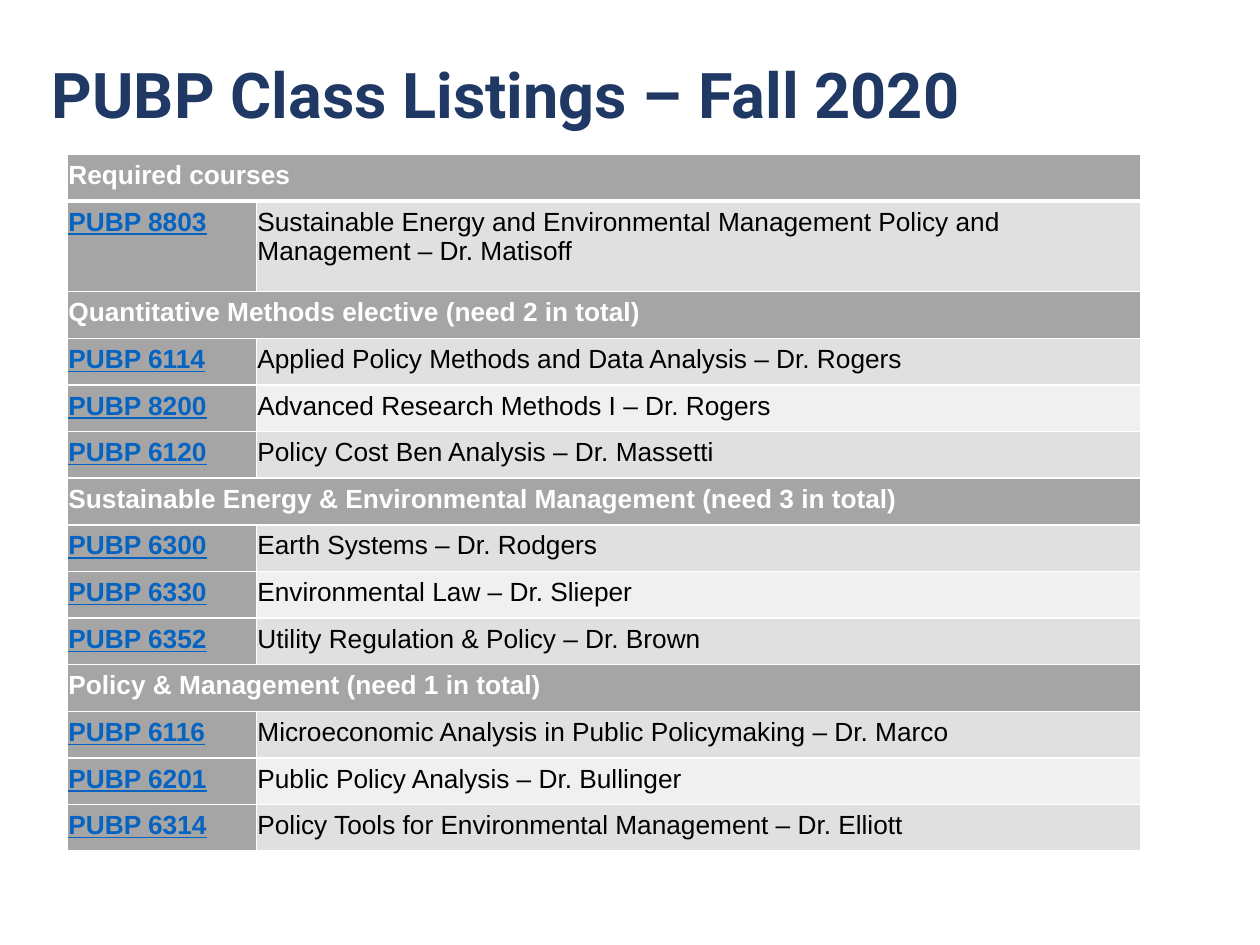
from dataclasses import dataclass

import pptx
import pptx.dml.color
import pptx.enum.text
import pptx.oxml
import pptx.oxml.ns
import pptx.util
from pptx.util import Cm, Pt

COLORS = {
    "title": "203864",
    "heading": "A5A5A5",
    "band_dark": "E0E0E0",
    "band_light": "F0F0F0",
    "link": "0563C1",
    "white": "FFFFFF",
    "black": "000000",
}
THIN, THICK = 0.96, 3
ROW_HEIGHT, TALL_ROW_HEIGHT = Cm(0.94), Cm(1.83)
COLUMN_WIDTHS = (Cm(3.81), Cm(17.83))


@dataclass
class Course:
    code: str
    description: str
    height: int = ROW_HEIGHT


@dataclass
class Section:
    heading: str
    courses: list[Course]


SECTIONS = [
    Section("Required courses", [
        Course("PUBP 8803", "Sustainable Energy and Environmental Management Policy and "
               "Management – Dr. Matisoff", TALL_ROW_HEIGHT),
    ]),
    Section("Quantitative Methods elective (need 2 in total)", [
        Course("PUBP 6114", "Applied Policy Methods and Data Analysis – Dr. Rogers"),
        Course("PUBP 8200", "Advanced Research Methods I – Dr. Rogers"),
        Course("PUBP 6120", "Policy Cost Ben Analysis – Dr. Massetti"),
    ]),
    Section("Sustainable Energy & Environmental Management (need 3 in total)", [
        Course("PUBP 6300", "Earth Systems – Dr. Rodgers"),
        Course("PUBP 6330", "Environmental Law – Dr. Slieper"),
        Course("PUBP 6352", "Utility Regulation & Policy – Dr. Brown"),
    ]),
    Section("Policy & Management (need 1 in total)", [
        Course("PUBP 6116", "Microeconomic Analysis in Public Policymaking – Dr. Marco"),
        Course("PUBP 6201", "Public Policy Analysis – Dr. Bullinger"),
        Course("PUBP 6314", "Policy Tools for Environmental Management – Dr. Elliott"),
    ]),
]


def rgb(name: str) -> pptx.dml.color.RGBColor:
    return pptx.dml.color.RGBColor.from_string(COLORS[name])


def set_borders(cell, top: float, bottom: float) -> None:
    properties = cell._tc.get_or_add_tcPr()
    widths = {"lnL": THIN, "lnR": THIN, "lnT": top, "lnB": bottom}
    for position, (side, width) in enumerate(widths.items()):
        properties.insert(position, pptx.oxml.parse_xml(
            f'<a:{side} {pptx.oxml.ns.nsdecls("a")} w="{Pt(width)}"><a:solidFill>'
            f'<a:srgbClr val="{COLORS["white"]}"/></a:solidFill></a:{side}>'))


def style_cell(cell, row: int, fill: str) -> None:
    cell.margin_left = cell.margin_right = Cm(0.02)
    cell.margin_top = cell.margin_bottom = Cm(0.13)
    cell.fill.solid()
    cell.fill.fore_color.rgb = rgb(fill)
    # A thick rule separates the first heading from the rows below
    set_borders(cell, THICK if row == 1 else THIN, THICK if row == 0 else THIN)


def write_cell(cell, text: str, color: str, bold: bool, underline: bool = False) -> None:
    cell.text = text
    font = cell.text_frame.paragraphs[0].font
    font.name, font.size = "Arial", Pt(15)
    font.bold, font.underline = bold, underline
    font.color.rgb = rgb(color)


def add_heading(table, row: int, heading: str) -> None:
    table.rows[row].height = ROW_HEIGHT
    for column in range(2):
        style_cell(table.cell(row, column), row, "heading")
    table.cell(row, 0).merge(table.cell(row, 1))
    write_cell(table.cell(row, 0), heading, "white", bold=True)


def add_course(table, row: int, course: Course) -> None:
    table.rows[row].height = course.height
    code, description = table.cell(row, 0), table.cell(row, 1)
    style_cell(code, row, "heading")
    style_cell(description, row, "band_dark" if row % 2 else "band_light")
    write_cell(code, course.code, "link", bold=True, underline=True)
    write_cell(description, course.description, "black", bold=False)


def add_title(slide, text: str) -> None:
    title = slide.shapes.title
    title.left, title.top, title.width, title.height = Cm(0.79), Cm(0.56), Cm(23.8), Cm(2.82)
    frame = title.text_frame
    frame.text = text
    frame.auto_size = pptx.enum.text.MSO_AUTO_SIZE.NONE
    frame.vertical_anchor = pptx.enum.text.MSO_ANCHOR.MIDDLE
    paragraph = frame.paragraphs[0]
    paragraph.alignment = pptx.enum.text.PP_ALIGN.LEFT
    paragraph.line_spacing = 0.9
    font = paragraph.font
    font.name, font.size, font.bold = "Roboto", Pt(36), True
    font.color.rgb = rgb("title")


def add_listing(slide, sections: list[Section]) -> None:
    row_count = sum(1 + len(section.courses) for section in sections)
    heights = sum(ROW_HEIGHT + sum(course.height for course in section.courses)
                  for section in sections)
    table = slide.shapes.add_table(row_count, 2, Cm(1.36), Cm(3.11),
                                   sum(COLUMN_WIDTHS), heights).table
    for column, width in zip(table.columns, COLUMN_WIDTHS):
        column.width = width
    row = 0
    for section in sections:
        add_heading(table, row, section.heading)
        for row, course in enumerate(section.courses, row + 1):
            add_course(table, row, course)
        row += 1


def main() -> None:
    presentation = pptx.Presentation()
    presentation.slide_width, presentation.slide_height = Cm(25.4), Cm(19.05)
    slide = presentation.slides.add_slide(presentation.slide_layouts[5])
    add_title(slide, "PUBP Class Listings – Fall 2020")
    add_listing(slide, SECTIONS)
    presentation.save("out.pptx")


if __name__ == "__main__":
    main()
